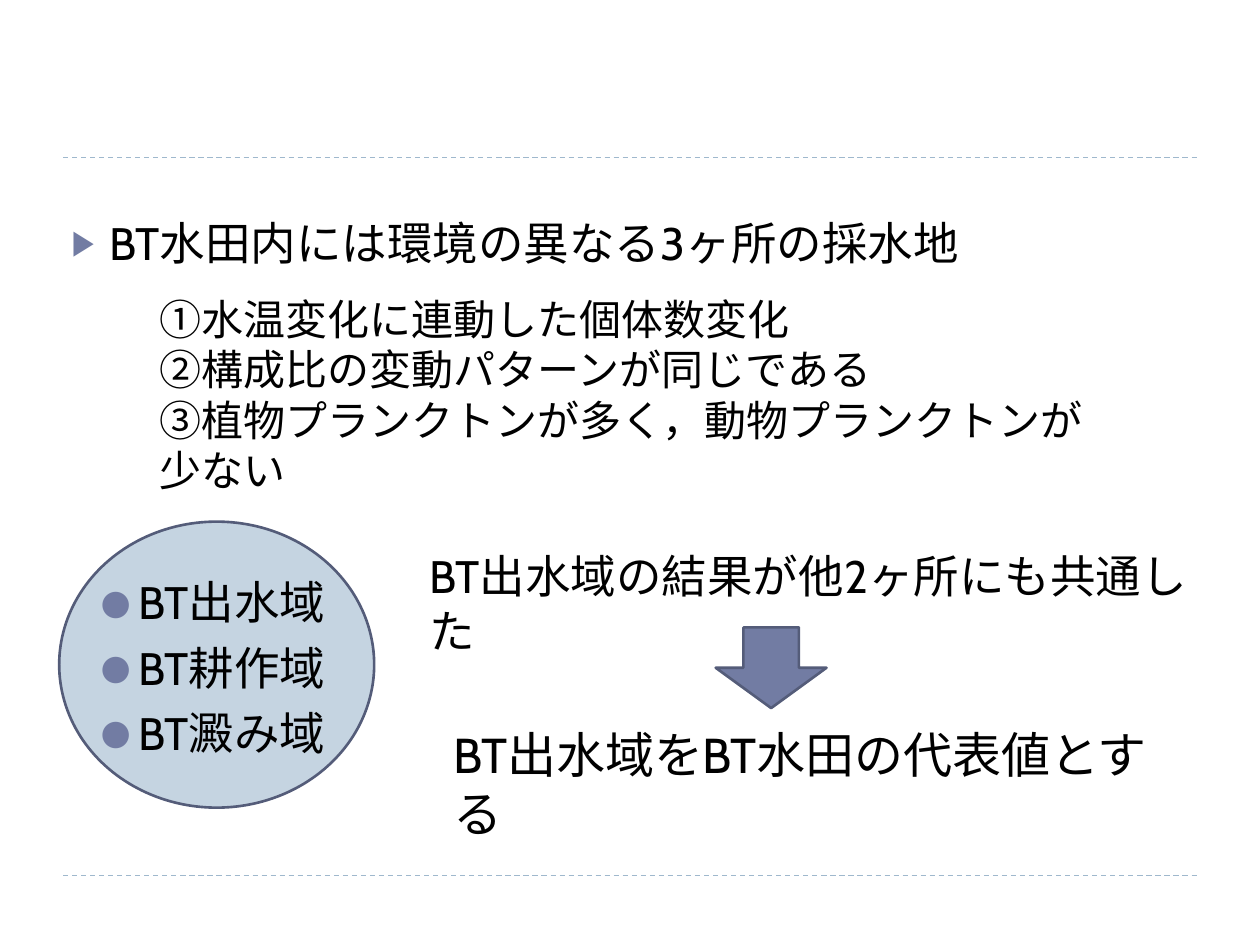
from lxml import etree
from pptx import Presentation
from pptx.dml.color import RGBColor
from pptx.enum.dml import MSO_LINE_DASH_STYLE as Dash
from pptx.enum.shapes import MSO_CONNECTOR as Connector, MSO_SHAPE as Shape
from pptx.enum.text import MSO_ANCHOR as Anchor
from pptx.oxml.ns import qn
from pptx.util import Inches, Pt

# Grid of 20 columns by 15 rows, half an inch each
CELL = Inches(0.5)
COLUMNS, ROWS = 20, 15

FONT = "Cabin"
BLACK = RGBColor(0x00, 0x00, 0x00)
RULE_BLUE = RGBColor(0x9F, 0xB8, 0xCD)
PALE_BLUE = RGBColor(0xC5, 0xD4, 0xE1)
SLATE = RGBColor(0x72, 0x7C, 0xA3)
DARK_SLATE = RGBColor(0x54, 0x5C, 0x79)


def cells(*counts):
    return [round(count * CELL) for count in counts]


def add_rule(slide, row):
    left, right, y = cells(1, COLUMNS - 1, row)
    rule = slide.shapes.add_connector(Connector.STRAIGHT, left, y, right, y)
    rule.line.color.rgb = RULE_BLUE
    rule.line.width = Pt(0.75)
    rule.line.dash_style = Dash.DASH
    etree.SubElement(rule._element.spPr, qn("a:effectLst"))


def add_figure(slide, kind, area, fill, rotation=0):
    figure = slide.shapes.add_shape(kind, *cells(*area))
    figure.shadow.inherit = False
    figure.rotation = rotation
    figure.fill.solid()
    figure.fill.fore_color.rgb = fill
    figure.line.color.rgb = DARK_SLATE
    figure.line.width = Pt(1.5)


def add_bullet(paragraph, mark):
    properties = paragraph._p.get_or_add_pPr()
    indent = Inches(0.3)
    properties.set("marL", str(indent))
    properties.set("indent", str(-indent))
    color = etree.SubElement(properties, qn("a:buClr"))
    etree.SubElement(color, qn("a:srgbClr"), val=str(SLATE))
    etree.SubElement(properties, qn("a:buSzPct"), val="76000")
    etree.SubElement(properties, qn("a:buFont"), typeface=FONT)
    etree.SubElement(properties, qn("a:buChar"), char=mark)


def add_text(slide, area, lines, size, bullet=None):
    frame = slide.shapes.add_textbox(*cells(*area)).text_frame
    frame.word_wrap = True
    frame.vertical_anchor = Anchor.TOP
    for number, line in enumerate(lines):
        paragraph = frame.add_paragraph() if number else frame.paragraphs[0]
        if bullet:
            add_bullet(paragraph, bullet)
            if number:
                paragraph.space_before = Pt(6)
        run = paragraph.add_run()
        run.text = line
        run.font.name = FONT
        run.font.size = Pt(size)
        run.font.color.rgb = BLACK


def main():
    deck = Presentation()
    deck.slide_width, deck.slide_height = cells(COLUMNS, ROWS)
    slide = deck.slides.add_slide(deck.slide_layouts[6])

    # Rules above and below the content
    for row in (2.5, 13.9):
        add_rule(slide, row)

    # Finding and its three reasons
    add_text(slide, (0.94, 3.32, 18.06, 1.24),
             ["BT水田内には環境の異なる3ヶ所の採水地"], 26, "▶")
    add_text(slide, (2.34, 4.56, 15.12, 2.62),
             ["①水温変化に連動した個体数変化",
              "②構成比の変動パターンが同じである",
              "③植物プランクトンが多く，動物プランクトンが少ない"], 24)

    # Sampling areas
    add_figure(slide, Shape.OVAL, (0.94, 8.28, 5, 4.54), PALE_BLUE)
    add_text(slide, (1.4, 9.02, 4.22, 3.16),
             ["BT出水域", "BT耕作域", "BT澱み域"], 26, "●")

    # Shared result leading to the conclusion
    add_figure(slide, Shape.RIGHT_ARROW, (11.6, 9.72, 1.28, 1.76), SLATE, 90)
    add_text(slide, (6.62, 8.6, 12.9, 1.08),
             ["BT出水域の結果が他2ヶ所にも共通した"], 26)
    add_text(slide, (7, 11.4, 12.06, 1.14),
             ["BT出水域をBT水田の代表値とする"], 28)

    deck.save("out.pptx")


if __name__ == "__main__":
    main()
